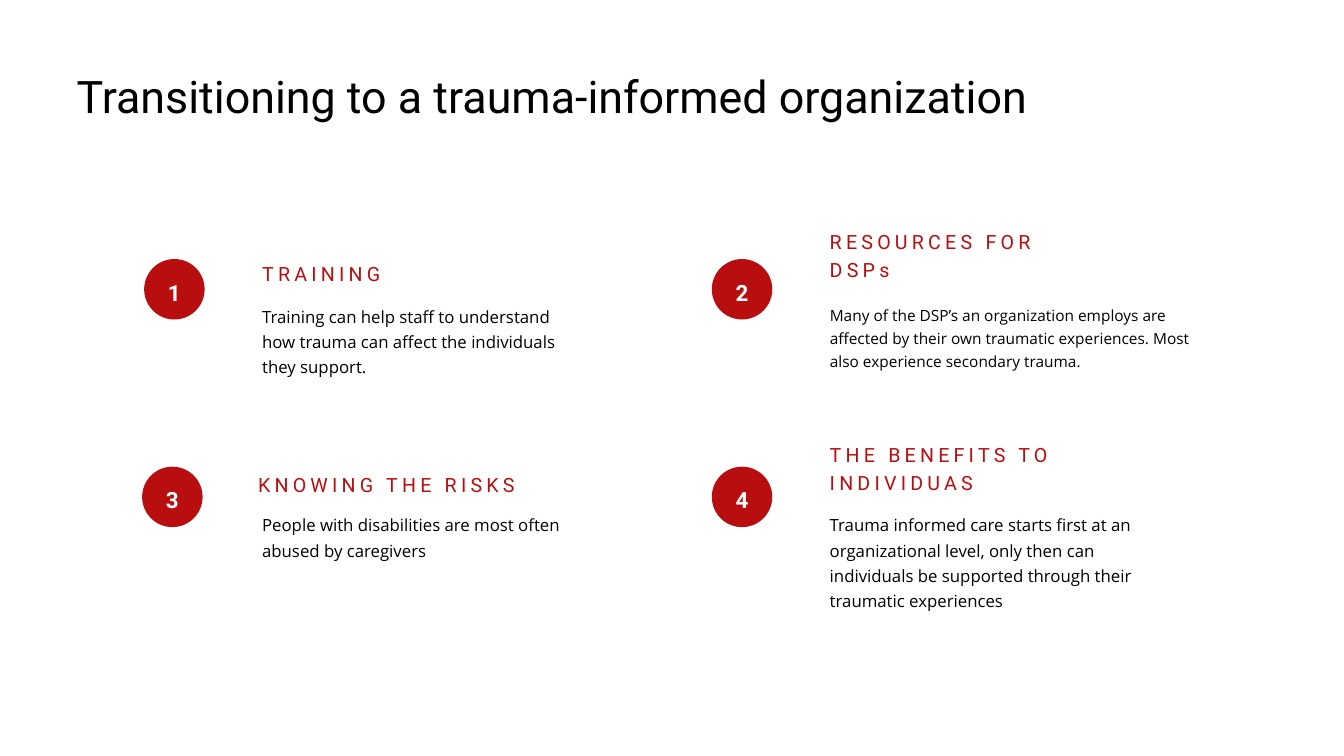
from pptx import Presentation
from pptx.dml.color import RGBColor
from pptx.enum.shapes import MSO_SHAPE as Shape
from pptx.enum.text import MSO_ANCHOR as Anchor, MSO_AUTO_SIZE as AutoSize, PP_ALIGN as Align
from pptx.util import Inches, Pt

RED, BLACK, WHITE = "B80E0F", "000000", "FFFFFF"


def color(target, value):
    target.rgb = RGBColor.from_string(value)


def write(shape, text, frame_format, paragraph_format, font_format, ink, spacing=0):
    frame = shape.text_frame
    paragraph = frame.paragraphs[0]
    run = paragraph.add_run()
    run.text = text
    for target, values in ((frame, frame_format), (paragraph, paragraph_format),
                           (run.font, font_format)):
        for name, value in values.items():
            setattr(target, name, value)
    color(run.font.color, ink)
    if spacing:
        run.font._element.set("spc", str(spacing * 100))


presentation = Presentation()
presentation.slide_width = Inches(13.33)
presentation.slide_height = Inches(7.5)
slide = presentation.slides.add_slide(presentation.slide_layouts[6])

# Formats
text_frame = {"word_wrap": True, "auto_size": AutoSize.SHAPE_TO_FIT_TEXT,
              "margin_left": 0, "margin_top": 0,
              "margin_right": Inches(0.1), "margin_bottom": 0}
heading_frame = {**text_frame, "vertical_anchor": Anchor.BOTTOM}
badge_frame = {"word_wrap": True, "vertical_anchor": Anchor.BOTTOM}
title_font = {"name": "Roboto", "size": Pt(32)}
heading_font = {"name": "Roboto", "size": Pt(14)}
badge_font = {"name": "Roboto", "size": Pt(16), "bold": True}

# Title
title = slide.shapes.add_textbox(Inches(0.76), Inches(0.67), Inches(9.62), Inches(0.53))
write(title, "Transitioning to a trauma-informed organization",
      text_frame, {"line_spacing": Pt(39)}, title_font, BLACK)

# Grid of numbered steps
columns, rows = (1.43, 7.06), (2.57, 4.63)
text_indent, badge_size = 1.17, 0.6
body_tops = (2.99, 5.06)

# Heading, heading top and height, left nudges of badge and heading,
# body, body width and height, body size
steps = [
    ("TRAINING", 2.57, 0.26, 0, 0,
     "Training can help staff to understand how trauma can affect the individuals they support.",
     3.3, 0.74, 12),
    ("RESOURCES FOR DSPs", 2.53, 0.26, 0, 0,
     "Many of the DSP’s an organization employs are affected by their own traumatic "
     "experiences. Most also experience secondary trauma.",
     3.82, 0.68, 11),
    ("KNOWING THE RISKS", 4.67, 0.26, -0.02, -0.04,
     "People with disabilities are most often abused by caregivers",
     3.3, 0.49, 12),
    ("THE BENEFITS TO INDIVIDUAS", 4.36, 0.55, 0, 0,
     "Trauma informed care starts first at an organizational level, only then can "
     "individuals be supported through their traumatic experiences",
     3.3, 0.99, 12),
]

for index, (heading_text, heading_top, heading_height, badge_nudge, heading_nudge,
            body_text, body_width, body_height, body_size) in enumerate(steps):
    row, column = divmod(index, len(columns))
    left = columns[column]
    text_left = left + text_indent

    # Numbered badge
    badge = slide.shapes.add_shape(Shape.OVAL, Inches(left + badge_nudge), Inches(rows[row]),
                                   Inches(badge_size), Inches(badge_size))
    badge.shadow.inherit = False
    badge.fill.solid()
    color(badge.fill.fore_color, RED)
    badge.line.fill.background()
    write(badge, str(index + 1), badge_frame, {"alignment": Align.CENTER},
          badge_font, WHITE, spacing=3)

    # Heading and body
    heading = slide.shapes.add_textbox(Inches(text_left + heading_nudge), Inches(heading_top),
                                       Inches(2.77), Inches(heading_height))
    write(heading, heading_text, heading_frame, {"line_spacing": 1.2},
          heading_font, RED, spacing=3)
    body = slide.shapes.add_textbox(Inches(text_left), Inches(body_tops[row]),
                                    Inches(body_width), Inches(body_height))
    write(body, body_text, text_frame, {"line_spacing": 1.25},
          {"name": "Open Sans", "size": Pt(body_size)}, BLACK)

presentation.save("out.pptx")
